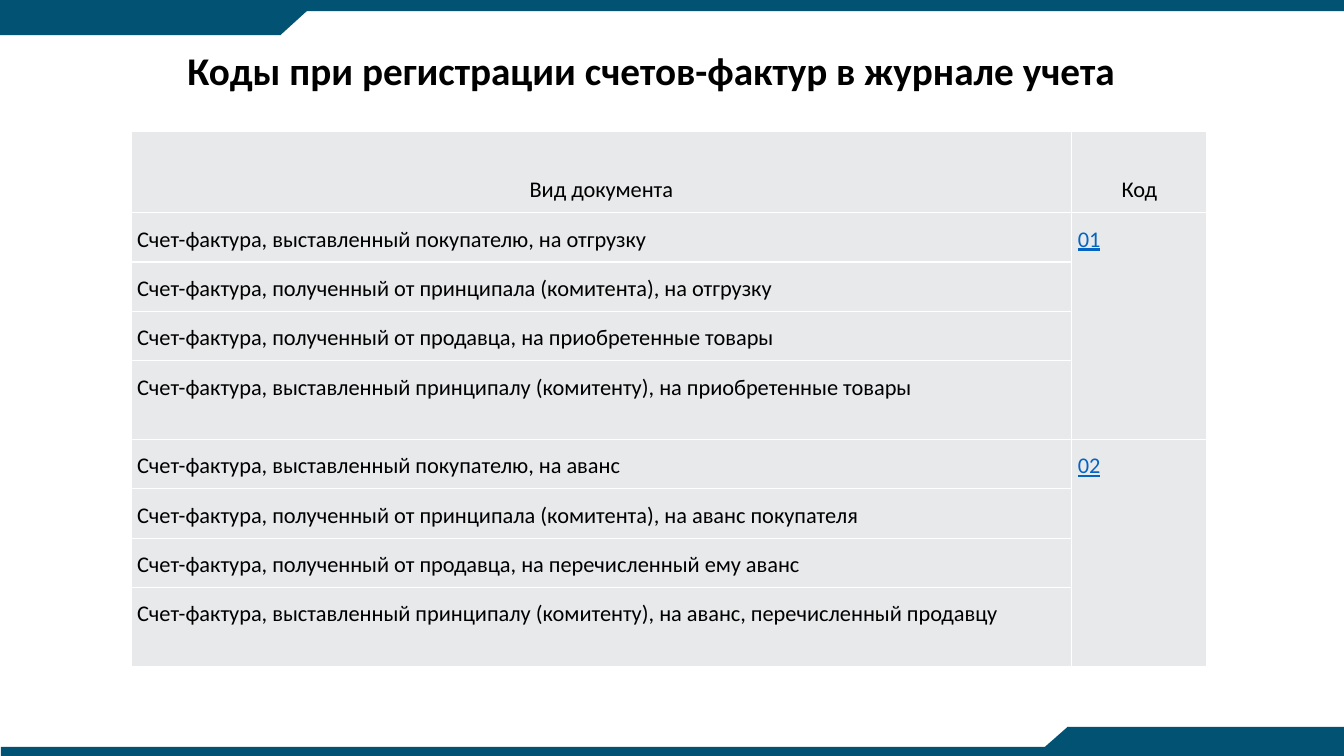
"""Build a slide with the registration codes for invoices in the journal."""
from lxml import etree
from pptx import Presentation, util as u
from pptx.dml.color import RGBColor
from pptx.enum import shapes, text
from pptx.oxml.ns import qn

TITLE = "Коды при регистрации счетов-фактур в журнале учета"
HEADINGS = ("Вид документа", "Код")
CODES = {
    "01": (
        "Счет-фактура, выставленный покупателю, на отгрузку",
        "Счет-фактура, полученный от принципала (комитента), на отгрузку",
        "Счет-фактура, полученный от продавца, на приобретенные товары",
        "Счет-фактура, выставленный принципалу (комитенту), на приобретенные товары",
    ),
    "02": (
        "Счет-фактура, выставленный покупателю, на аванс",
        "Счет-фактура, полученный от принципала (комитента), на аванс покупателя",
        "Счет-фактура, полученный от продавца, на перечисленный ему аванс",
        "Счет-фактура, выставленный принципалу (комитенту), на аванс, перечисленный продавцу",
    ),
}
COLORS = {"band": "025373", "cell": "E7E9EB", "border": "FFFFFF",
          "text": "000000", "code": "0563C1"}
FONT = "Calibri"
WIDTH, HEIGHT = 13.33, 7.5
COLUMNS = (9.33, 1.34)
HEAD_ROW, ROW, LAST_ROW = 0.81, 0.49, 0.78
TABLE_LEFT, TABLE_TOP = 1.3, 1.3
RECT = shapes.MSO_SHAPE.RECTANGLE
WEDGE = shapes.MSO_SHAPE.FLOWCHART_MERGE
BANDS = (
    (RECT, 0, 0, WIDTH, 0.11, 0),
    (RECT, 0.01, 7.41, WIDTH - 0.01, 0.09, 0),
    (RECT, 0, 0.05, 2.78, 0.3, 0),
    (WEDGE, 2.45, 0.05, 0.66, 0.3, 0),
    (RECT, 10.59, 7.21, WIDTH - 10.59, 0.29, 0),
    (WEDGE, 10.26, 7.21, 0.66, 0.29, 180),
)


def color(name):
    return RGBColor.from_string(COLORS[name])


def inches(*lengths):
    return [u.Inches(length) for length in lengths]


def style_font(font, size, name="text", bold=False):
    font.name, font.size, font.bold = FONT, u.Pt(size), bold
    font.color.rgb = color(name)


def add_band(slide, kind, left, top, width, height, turn):
    band = slide.shapes.add_shape(kind, *inches(left, top, width, height))
    band.rotation = turn
    band.shadow.inherit = False
    band.fill.solid()
    band.fill.fore_color.rgb = color("band")
    band.line.fill.background()


def set_title(title):
    title.left, title.top, title.width, title.height = inches(0.26, 0.39, 12.39, 0.61)
    frame = title.text_frame
    frame.text = TITLE
    frame.word_wrap = True
    frame.auto_size = text.MSO_AUTO_SIZE.SHAPE_TO_FIT_TEXT
    frame.vertical_anchor = text.MSO_ANCHOR.TOP
    frame.margin_left = frame.margin_right = u.Inches(0.13)
    frame.margin_top = frame.margin_bottom = u.Inches(0.07)
    frame.paragraphs[0].alignment = text.PP_ALIGN.CENTER
    style_font(frame.paragraphs[0].runs[0].font, 28, bold=True)


def style_cell(cell):
    cell.margin_left = cell.margin_right = u.Inches(0.06)
    cell.margin_top = cell.margin_bottom = u.Inches(0.09)
    properties = cell._tc.get_or_add_tcPr()
    for side in ("a:lnL", "a:lnR", "a:lnT", "a:lnB"):
        border = etree.SubElement(properties, qn(side), w=str(u.Pt(1)))
        fill = etree.SubElement(border, qn("a:solidFill"))
        etree.SubElement(fill, qn("a:srgbClr"), val=COLORS["border"])
    cell.fill.solid()
    cell.fill.fore_color.rgb = color("cell")


def write_cell(cell, words, name="text", heading=False):
    cell.text_frame.text = words
    paragraph = cell.text_frame.paragraphs[0]
    paragraph.line_spacing = 1.15
    paragraph.alignment = text.PP_ALIGN.CENTER if heading else text.PP_ALIGN.LEFT
    cell.vertical_anchor = text.MSO_ANCHOR.BOTTOM if heading else text.MSO_ANCHOR.TOP
    font = paragraph.runs[0].font
    style_font(font, 16, name)
    font.underline = name == "code"


def add_codes(slide):
    heights = [HEAD_ROW]
    for documents in CODES.values():
        heights += [ROW] * (len(documents) - 1) + [LAST_ROW]
    place = inches(TABLE_LEFT, TABLE_TOP, sum(COLUMNS), sum(heights))
    table = slide.shapes.add_table(len(heights), len(COLUMNS), *place).table
    table.first_row = table.horz_banding = False
    for column, width in zip(table.columns, COLUMNS):
        column.width = u.Inches(width)
    for row, height in zip(table.rows, heights):
        row.height = u.Inches(height)
    for cell in table.iter_cells():
        style_cell(cell)
    for column, heading in enumerate(HEADINGS):
        write_cell(table.cell(0, column), heading, heading=True)
    first = 1
    for code, documents in CODES.items():
        for row, document in enumerate(documents, first):
            write_cell(table.cell(row, 0), document)
        table.cell(first, 1).merge(table.cell(row, 1))
        write_cell(table.cell(first, 1), code, "code")
        first = row + 1


def main():
    deck = Presentation()
    deck.slide_width, deck.slide_height = inches(WIDTH, HEIGHT)
    slide = deck.slides.add_slide(deck.slide_layouts.get_by_name("Title Only"))
    for band in BANDS:
        add_band(slide, *band)
    set_title(slide.shapes.title)
    add_codes(slide)
    deck.save("out.pptx")


if __name__ == "__main__":
    main()
